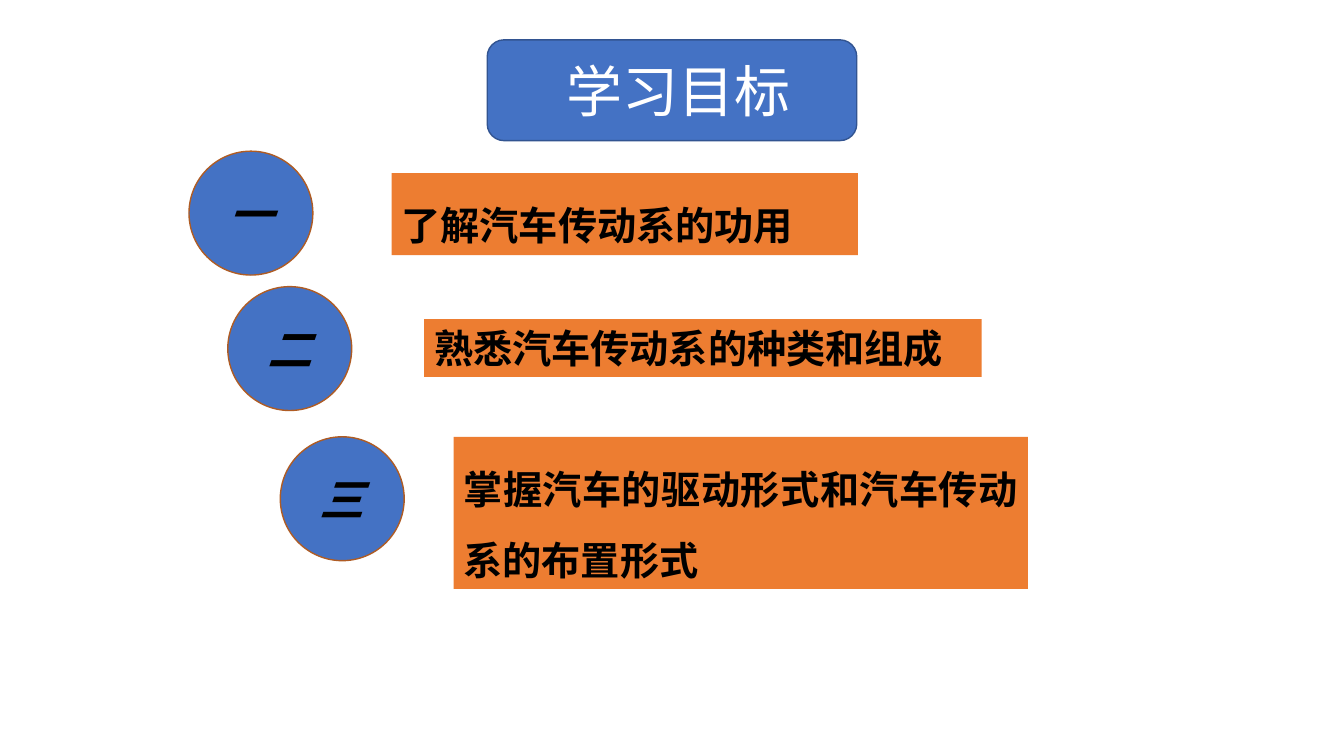
"""Builds the learning objectives slide with three numbered goals."""
from pptx import Presentation
from pptx.dml.color import RGBColor
from pptx.enum.lang import MSO_LANGUAGE_ID as Lang
from pptx.enum.shapes import MSO_SHAPE as Shape
from pptx.enum.text import MSO_ANCHOR as Anchor, MSO_AUTO_SIZE as Fit, PP_ALIGN as Align
from pptx.util import Pt

PX = 9525
CIRCLE = 118
COLORS = {
    "blue": "4472C4",
    "navy": "325491",
    "orange": "ED7D31",
    "brown": "AF5C24",
    "white": "FFFFFF",
    "black": "000000",
}
TITLE_FONT = {"name": "Arial", "size": Pt(40)}
NUMBER_FONT = {"name": "Arial", "size": Pt(32), "bold": True, "italic": True}
GOAL_FONT = {"name": "Noto Sans CJK SC", "size": Pt(28), "bold": True}
CENTERED = {"alignment": Align.CENTER}
SPACED = {"alignment": Align.JUSTIFY, "line_spacing": 1.5}
SINGLE = {"alignment": Align.LEFT}
MIDDLE = {"word_wrap": True, "vertical_anchor": Anchor.MIDDLE}
GROWING = {"word_wrap": True, "vertical_anchor": Anchor.TOP, "auto_size": Fit.SHAPE_TO_FIT_TEXT}

GOALS = [
    ("一", (180, 144), "了解汽车传动系的功用", (373, 165, 444, 78), SPACED),
    ("二", (217, 273), "熟悉汽车传动系的种类和组成", (404, 304, 531, 55), SINGLE),
    ("三", (267, 416), "掌握汽车的驱动形式和汽车传动系的布置形式", (432, 416, 547, 145), SPACED),
]


def rgb(color):
    return RGBColor.from_string(COLORS[color])


def add_block(kind, box, fill, outline, text, color, font, layout, frame):
    block = slide.shapes.add_shape(kind, *(length * PX for length in box))
    block.shadow.inherit = False
    block.fill.solid()
    block.fill.fore_color.rgb = rgb(fill)
    if outline:
        block.line.color.rgb = rgb(outline)
        block.line.width = Pt(1)
    else:
        block.line.fill.background()
    paragraph = block.text_frame.paragraphs[0]
    run = paragraph.add_run()
    run.text = text
    run.font.color.rgb = rgb(color)
    run.font.language_id = Lang.SIMPLIFIED_CHINESE
    for part, values in ((block.text_frame, frame), (paragraph, layout), (run.font, font)):
        for name, value in values.items():
            setattr(part, name, value)


deck = Presentation()
deck.slide_width, deck.slide_height = 1280 * PX, 720 * PX
slide = deck.slides.add_slide(deck.slide_layouts[6])

add_block(Shape.ROUNDED_RECTANGLE, (464, 38, 352, 96), "blue", "navy",
          " 学习目标", "white", TITLE_FONT, CENTERED, MIDDLE)

for number, corner, goal, bar, layout in GOALS:
    add_block(Shape.OVAL, (*corner, CIRCLE, CIRCLE), "blue", "brown",
              number, "black", NUMBER_FONT, CENTERED, MIDDLE)
    add_block(Shape.RECTANGLE, bar, "orange", None,
              goal, "black", GOAL_FONT, layout, GROWING)

deck.save("out.pptx")
